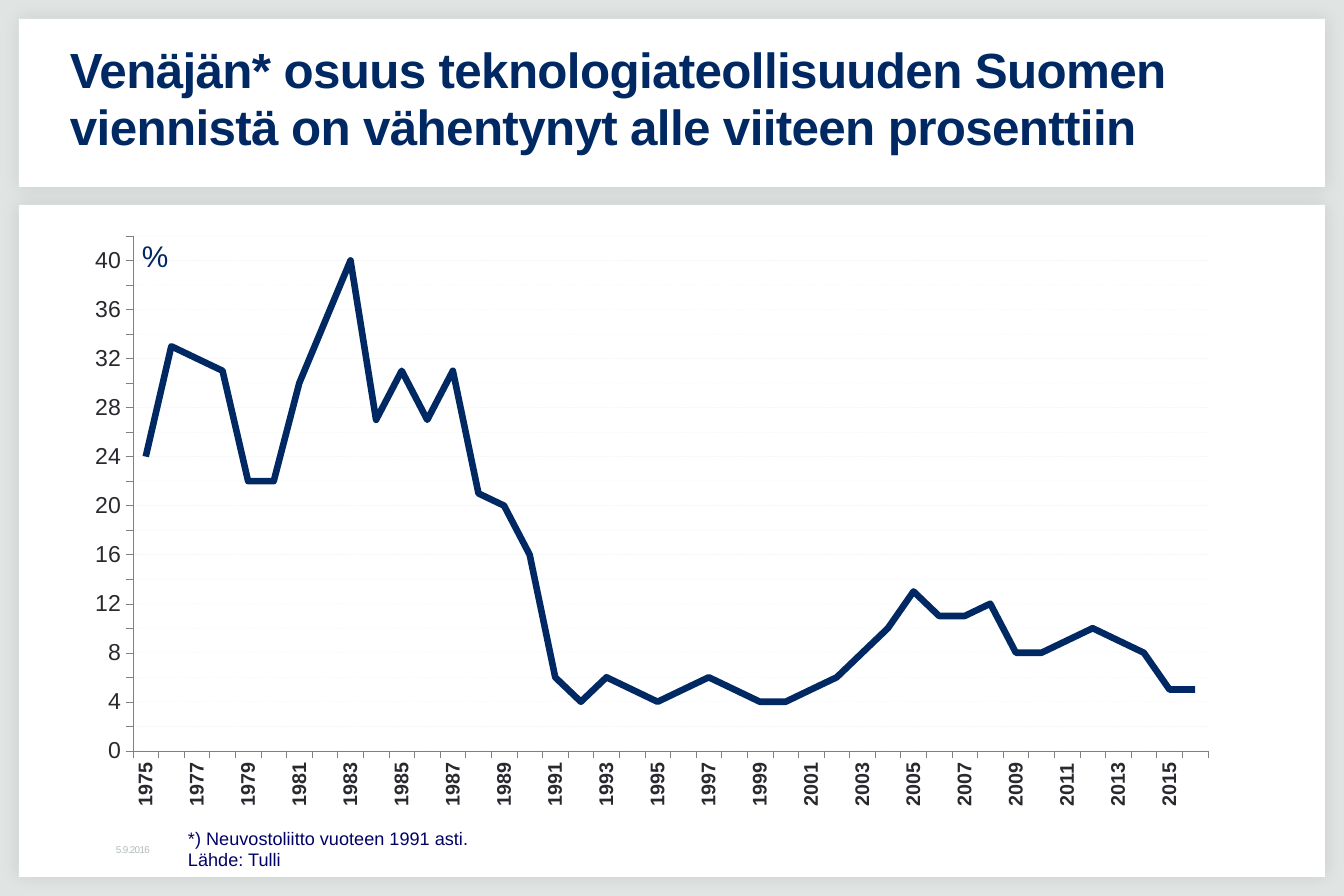
"""Builds the slide on Russia's share of Finnish technology industry exports."""
from lxml import etree
from pptx import Presentation
from pptx import util as u
from pptx.chart.data import CategoryChartData
from pptx.dml.color import RGBColor
from pptx.enum import chart as ch, dml, shapes, text
from pptx.oxml import ns

COLOURS = {"back": "E0E5E3", "panel": "FFFFFF", "navy": "002964", "unit": "002664",
           "note": "000066", "ink": "29282E", "pale": "B1BEB9", "axis": "808080",
           "shadow": "000000"}
FONT = "Arial"
EMU_PER_PX = 914400 / 118.5
YEARS = [str(year) for year in range(1975, 2016)] + ["2016\n(1-5)"]
SHARES = [24, 33, 32, 31, 22, 22, 30, 35, 40, 27, 31, 27, 31, 21,
          20, 16, 6, 4, 6, 5, 4, 5, 6, 5, 4, 4, 5, 6,
          8, 10, 13, 11, 11, 12, 8, 8, 9, 10, 9, 8, 5, 5]


def px(length):
    return u.Emu(round(length * EMU_PER_PX))


def rgb(name):
    return RGBColor.from_string(COLOURS[name])


def child(parent, tag, **attributes):
    element = etree.SubElement(parent, ns.qn(tag))
    for key, value in attributes.items():
        element.set(key, str(value))
    return element


def style_font(font, size, colour, bold=False):
    font.name, font.size, font.bold = FONT, u.Pt(size), bold
    font.color.rgb = rgb(colour)


def write(frame, content, size, colour, bold=False, tracking=0, line_spacing=None,
          insets=(12, 6, 12, 6), anchor=text.MSO_ANCHOR.TOP, wrap=True):
    frame.word_wrap = wrap
    frame.auto_size = text.MSO_AUTO_SIZE.NONE
    frame.vertical_anchor = anchor
    (frame.margin_left, frame.margin_top,
     frame.margin_right, frame.margin_bottom) = map(px, insets)
    for index, line in enumerate(content.split("\n")):
        paragraph = frame.add_paragraph() if index else frame.paragraphs[0]
        paragraph.alignment = text.PP_ALIGN.LEFT
        paragraph.line_spacing = line_spacing
        run = paragraph.add_run()
        run.text = line
        style_font(run.font, size, colour, bold)
        if tracking:
            run.font._element.set("spc", str(tracking))


class ExportSlide:
    def __init__(self):
        self.deck = Presentation()
        self.deck.slide_width, self.deck.slide_height = px(1344), px(896)
        self.slide = self.deck.slides.add_slide(self.deck.slide_layouts[5])
        fill = self.slide.background.fill
        fill.solid()
        fill.fore_color.rgb = rgb("back")

    def panel(self, *box):
        card = self.slide.shapes.add_shape(shapes.MSO_SHAPE.RECTANGLE, *map(px, box))
        card.fill.solid()
        card.fill.fore_color.rgb = rgb("panel")
        card.line.fill.background()
        card.shadow.inherit = False
        effects = card._element.spPr.find(ns.qn("a:effectLst"))
        shadow = child(effects, "a:outerShdw", blurRad=u.Pt(10), dist=0,
                       dir=2700000, algn="ctr", rotWithShape=0)
        tint = child(shadow, "a:srgbClr", val=COLOURS["shadow"])
        child(tint, "a:alpha", val=10000)
        self.slide.shapes._spTree.remove(card._element)
        self.slide.shapes._spTree.insert(2, card._element)

    def title(self, content, *box, **style):
        heading = self.slide.shapes.title
        heading.left, heading.top, heading.width, heading.height = map(px, box)
        write(heading.text_frame, content, **style)

    def label(self, content, *box, **style):
        write(self.slide.shapes.add_textbox(*map(px, box)).text_frame, content, **style)

    def line_chart(self, *box):
        data = CategoryChartData()
        data.categories = YEARS
        data.add_series("Series 1", SHARES)
        chart = self.slide.shapes.add_chart(
            ch.XL_CHART_TYPE.LINE, *map(px, box), data).chart
        chart.has_title = chart.has_legend = False
        style_font(chart.font, 18, "ink")
        plot = chart.plots[0]
        plot.vary_by_categories = False
        share = plot.series[0]
        share.smooth = False
        share.marker.style = ch.XL_MARKER_STYLE.NONE
        share.format.line.color.rgb = rgb("navy")
        share.format.line.width = u.Pt(4)
        self.axes(chart)
        self.place_plot(chart)

    def axes(self, chart):
        years, percent = chart.category_axis, chart.value_axis
        for axis, size, bold in ((years, 12, True), (percent, 14, False)):
            style_font(axis.tick_labels.font, size, "ink", bold)
            axis.major_tick_mark = ch.XL_TICK_MARK.OUTSIDE
            axis.minor_tick_mark = ch.XL_TICK_MARK.NONE
            axis.format.line.color.rgb = rgb("axis")
            axis.format.line.width = u.Pt(0.25)
        years.has_major_gridlines = False
        body = years._element.find(ns.qn("c:txPr")).find(ns.qn("a:bodyPr"))
        body.set("rot", "-5400000")
        body.set("vert", "horz")
        multi_level = years._element.find(ns.qn("c:noMultiLvlLbl"))
        for tag, step in (("c:tickLblSkip", 2), ("c:tickMarkSkip", 1)):
            skip = child(years._element, tag, val=step)
            if multi_level is not None:
                multi_level.addprevious(skip)
        percent.minimum_scale, percent.maximum_scale, percent.major_unit = 0, 42, 2
        percent.tick_labels.number_format = "0"
        percent.tick_labels.number_format_is_linked = False
        grid = percent.major_gridlines.format.line
        grid.color.rgb = rgb("pale")
        grid.width = u.Pt(0.25)
        grid.dash_style = dml.MSO_LINE.DASH
        tint = percent.major_gridlines._xAx.find(
            ".//" + ns.qn("c:majorGridlines")).find(".//" + ns.qn("a:srgbClr"))
        child(tint, "a:alpha", val=20000)

    def place_plot(self, chart):
        area = chart._chartSpace.find(".//" + ns.qn("c:plotArea"))
        layout = area.find(ns.qn("c:layout"))
        if layout is None:
            layout = child(area, "c:layout")
            area.insert(0, layout)
        manual = child(layout, "c:manualLayout")
        for tag, value in (("layoutTarget", "inner"), ("xMode", "edge"),
                           ("yMode", "edge"), ("x", 61 / 1160), ("y", 12 / 595),
                           ("w", 1075 / 1160), ("h", 515 / 595)):
            child(manual, "c:" + tag, val=value)


def main():
    exports = ExportSlide()
    for top, height in ((19, 168), (205, 672)):
        exports.panel(19, top, 1306, height)
    exports.title("Venäjän* osuus teknologiateollisuuden Suomen viennistä "
                  "on vähentynyt alle viiteen prosenttiin", 65, 35, 1223, 130,
                  size=30, colour="navy", bold=True, tracking=-40, line_spacing=0.95,
                  insets=(5, 6, 12, 6), anchor=text.MSO_ANCHOR.MIDDLE)
    exports.line_chart(72, 224, 1160, 595)
    exports.label("%", 130, 232, 94, 49, size=18.1, colour="unit")
    exports.label("*) Neuvostoliitto vuoteen 1991 asti.\nLähde: Tulli", 176, 821, 306, 56,
                  size=11, colour="note", wrap=False)
    exports.label("5.9.2016", 111, 840, 168, 19, size=6, colour="pale", tracking=-40,
                  insets=(5, 5, 5, 5), anchor=text.MSO_ANCHOR.MIDDLE)
    exports.deck.save("out.pptx")


if __name__ == "__main__":
    main()
